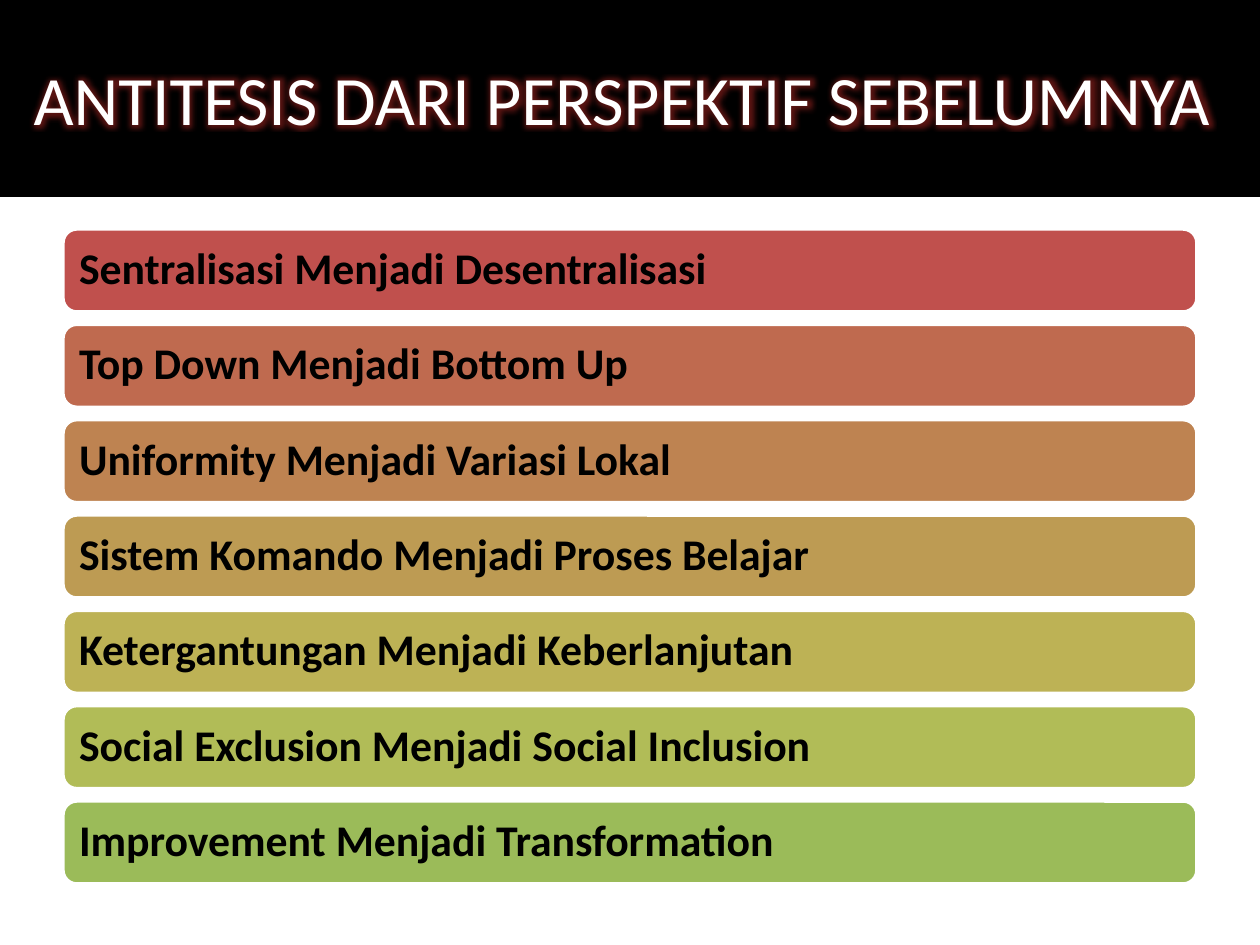
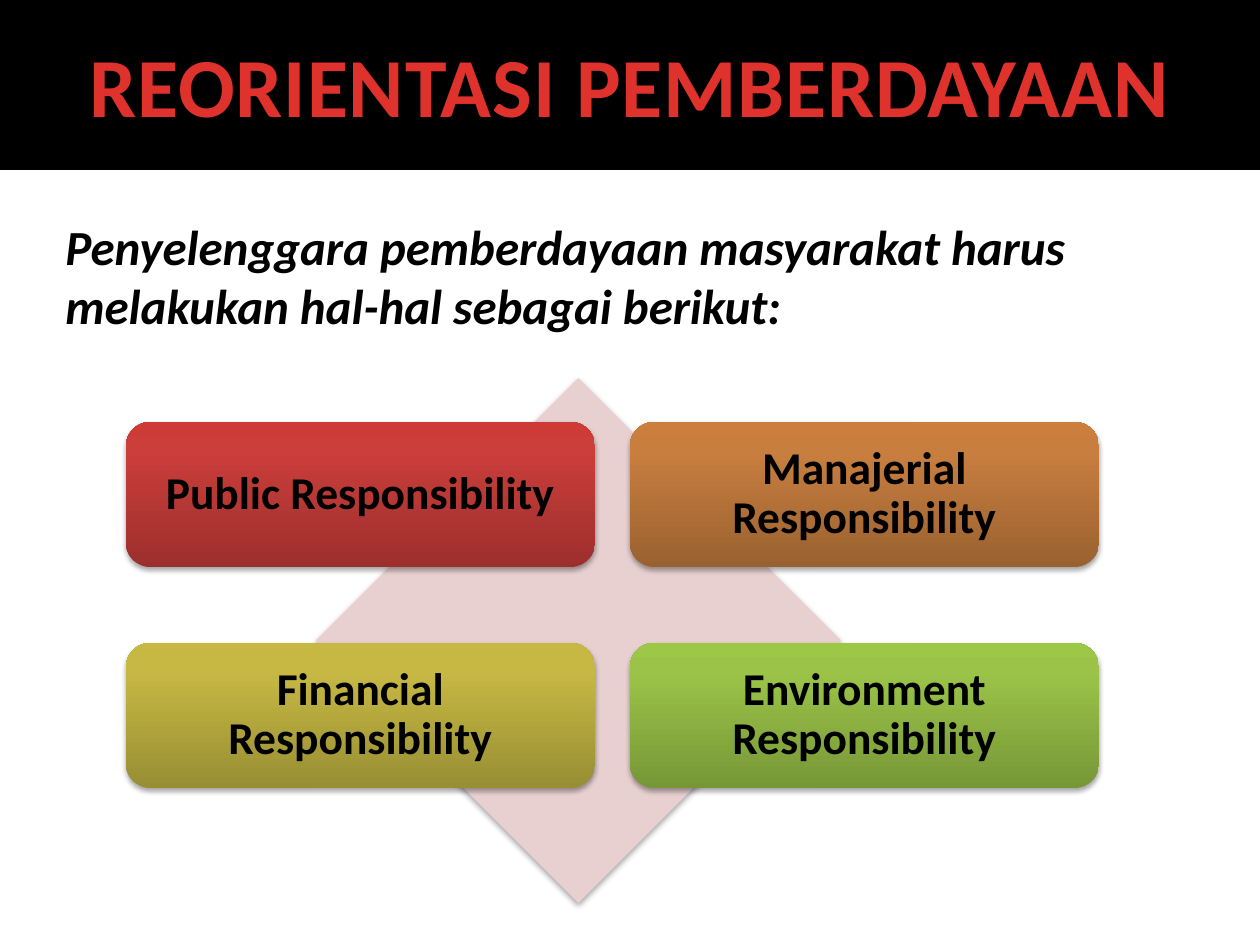
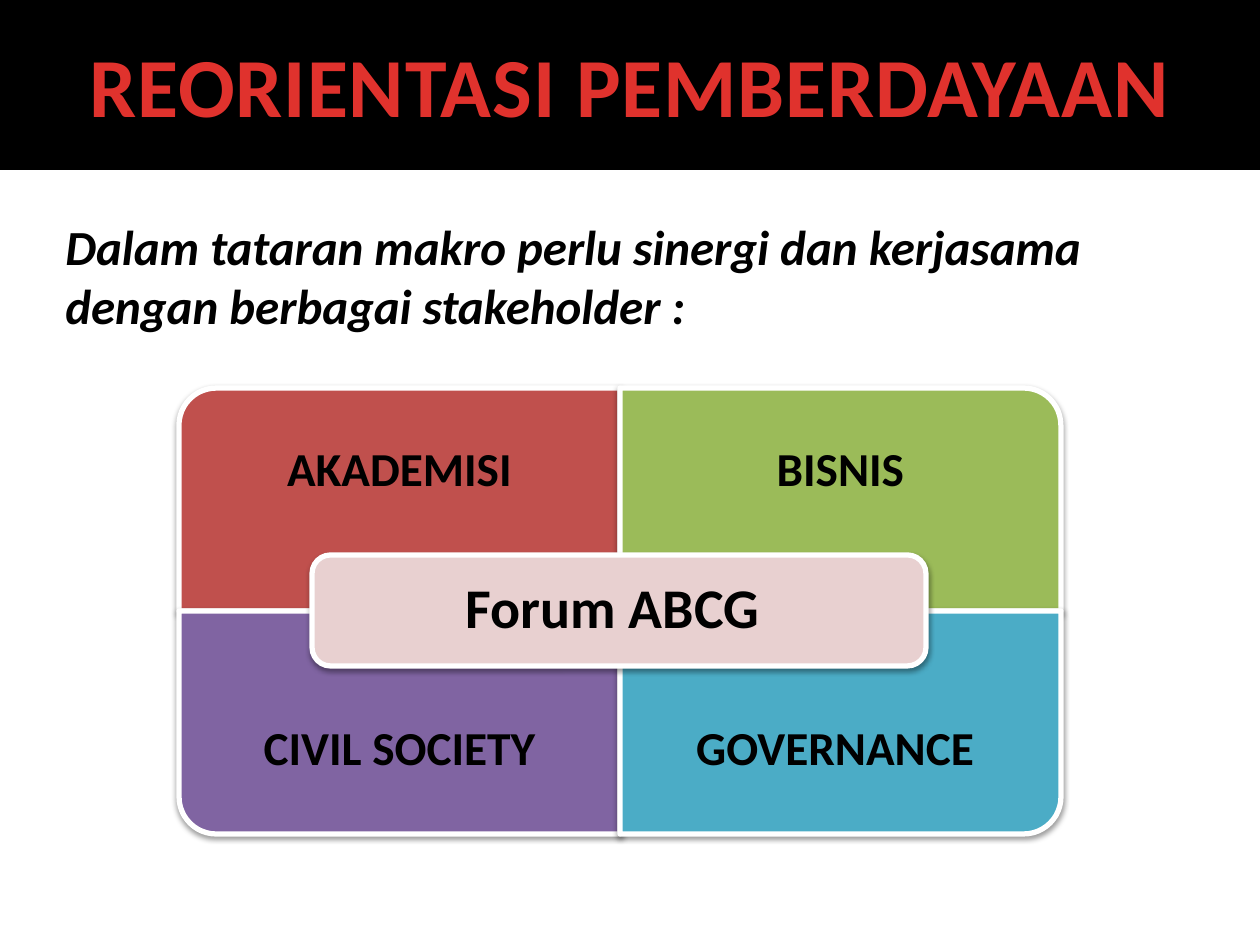
import pptx
import pptx.util
import pptx.dml.color
import pptx.enum.shapes
import pptx.enum.text
import pptx.oxml
import pptx.oxml.ns

# Content
ANTITHESIS_TITLE = "ANTITESIS DARI PERSPEKTIF SEBELUMNYA "
SHIFTS = [
    ("Sentralisasi Menjadi Desentralisasi", "red"),
    ("Top Down Menjadi Bottom Up", "rust"),
    ("Uniformity Menjadi Variasi Lokal", "copper"),
    ("Sistem Komando Menjadi Proses Belajar", "ochre"),
    ("Ketergantungan Menjadi Keberlanjutan", "mustard"),
    ("Social Exclusion Menjadi Social Inclusion", "lime"),
    ("Improvement Menjadi Transformation", "green"),
]
REORIENTATION_TITLE = "REORIENTASI PEMBERDAYAAN"
DUTIES_INTRO = "Penyelenggara pemberdayaan masyarakat harus melakukan hal-hal sebagai berikut:"
DUTIES = [  # text, gradient colours from the bottom up
    ("Public Responsibility", ("9C2F2D", "CB3E3A", "CE3B37")),
    ("Manajerial Responsibility", ("9A6130", "C87E3F", "CC7E3C")),
    ("Financial Responsibility", ("988E34", "C6B843", "C9BB41")),
    ("Environment Responsibility", ("779737", "9BC348", "9DC746")),
]
PARTNERS_INTRO = "Dalam tataran makro perlu sinergi dan kerjasama dengan berbagai stakeholder :"
PARTNERS = [  # text, colour, turn that points the round corner outwards
    ("AKADEMISI", "red", 270),
    ("BISNIS", "green", 0),
    ("CIVIL SOCIETY", "purple", 180),
    ("GOVERNANCE ", "blue", 90),
]
FORUM = "Forum ABCG "

# Shared style
COLORS = {
    "black": "000000", "white": "FFFFFF", "glow": "E0322D", "title_dark": "A2201C",
    "red": "C0504D", "rust": "BF6A4F", "copper": "BE8351", "ochre": "BD9B53",
    "mustard": "BDB255", "lime": "B1BC57", "green": "9BBB59",
    "purple": "8064A2", "blue": "4BACC6", "blush": "E8D0D0",
}
FONT = "Calibri"
TITLE_STOPS = [(25, COLORS["glow"]), (100, COLORS["title_dark"])]
DUTY_SHADOW = (35, 3.1, 1.8)  # opacity %, blur pt, distance pt
PARTNER_SHADOW = (38, 3.1, 1.6)
SLIDE_W, SLIDE_H = 1260, 945
SHAPE = pptx.enum.shapes.MSO_SHAPE
ALIGN = pptx.enum.text.PP_ALIGN
ANCHOR = pptx.enum.text.MSO_ANCHOR
qn = pptx.oxml.ns.qn


def px(length):
    return round(length * 914400 / 126)


def rgb(name):
    return pptx.dml.color.RGBColor.from_string(COLORS[name])


def parse(xml):
    head, tail = xml.split(">", 1)
    return pptx.oxml.parse_xml(f"{head} {pptx.oxml.ns.nsdecls('a')}>{tail}")


def set_gradient(fill, parent, stops, angle):
    """Fill with (percent, hex) stops; angle in degrees clockwise."""
    fill.gradient()
    stop_xml = "".join(
        f'<a:gs pos="{at * 1000}"><a:srgbClr val="{color}"/></a:gs>' for at, color in stops)
    parent.replace(parent.find(qn("a:gradFill")), parse(
        f'<a:gradFill><a:gsLst>{stop_xml}</a:gsLst>'
        f'<a:lin ang="{angle * 60000}" scaled="0"/></a:gradFill>'))


def write(shape, text, size, color="black", bold=True, italic=False, align=ALIGN.LEFT,
          anchor=ANCHOR.MIDDLE, inset=None, line_spacing=None, space_before=None,
          stops=None, tracking=None, glow=False):
    frame = shape.text_frame
    frame.word_wrap = True
    frame.vertical_anchor = anchor
    if inset is not None:
        frame.margin_left = frame.margin_right = px(inset)
        frame.margin_top = frame.margin_bottom = px(inset)
    paragraph = frame.paragraphs[0]
    paragraph.alignment = align
    if line_spacing:
        paragraph.line_spacing = line_spacing
    if space_before:
        paragraph.space_before = pptx.util.Pt(space_before)
    run = paragraph.add_run()
    run.text = text
    font = run.font
    font.name, font.size = FONT, pptx.util.Pt(size)
    font.bold, font.italic = bold, italic
    properties = run._r.get_or_add_rPr()
    if stops:
        set_gradient(font.fill, properties, stops, 90)
    else:
        font.color.rgb = rgb(color)
    if tracking:
        properties.set("spc", str(round(tracking * 100)))
    if glow:
        properties.find(qn("a:solidFill")).addnext(parse(
            f'<a:effectLst><a:glow rad="101600"><a:srgbClr val="{COLORS["glow"]}">'
            '<a:alpha val="40000"/></a:srgbClr></a:glow></a:effectLst>'))


def add_panel(slide, kind, box, fill=None, line=None, line_width=2, stops=None,
              shadow=None, turn=0):
    x, y, w, h = box
    if turn in (90, 270):
        x, y, w, h = x + (w - h) / 2, y + (h - w) / 2, h, w
    panel = slide.shapes.add_shape(kind, px(x), px(y), px(w), px(h))
    panel.rotation = turn
    panel.shadow.inherit = False
    properties = panel._element.spPr
    if stops:
        set_gradient(panel.fill, properties, stops, 270)
    else:
        panel.fill.solid()
        panel.fill.fore_color.rgb = rgb(fill)
    if line:
        panel.line.color.rgb = rgb(line)
        panel.line.width = pptx.util.Pt(line_width)
    else:
        panel.line.fill.background()
    if shadow:
        opacity, blur, distance = shadow
        properties.find(qn("a:effectLst")).append(parse(
            f'<a:outerShdw blurRad="{round(blur * 12700)}" dist="{round(distance * 12700)}" '
            f'dir="5400000" rotWithShape="0"><a:srgbClr val="{COLORS["black"]}">'
            f'<a:alpha val="{opacity * 1000}"/></a:srgbClr></a:outerShdw>'))
    return panel


def add_text(slide, box, text, size, **style):
    text_box = slide.shapes.add_textbox(*map(px, box))
    write(text_box, text, size, **style)
    return text_box


def add_label(slide, box, text, size, inset, align=ALIGN.CENTER):
    add_text(slide, box, text, size, inset=inset, align=align, line_spacing=0.9)


def shrink(box, edge):
    x, y, w, h = box
    return x + edge, y + edge, w - 2 * edge, h - 2 * edge


def add_title(slide, text, height, size, **style):
    band = add_panel(slide, SHAPE.RECTANGLE, (0, 0, SLIDE_W, height), "black", line="black")
    write(band, text, size, align=ALIGN.CENTER, **style)


def add_reorientation_slide(deck, intro):
    slide = deck.slides.add_slide(deck.slide_layouts[6])
    add_title(slide, REORIENTATION_TITLE, 168, 48, stops=TITLE_STOPS, tracking=0.5)
    intro_box = add_text(slide, (53, 210, 1144, 131), intro, 28, italic=True,
                         anchor=ANCHOR.TOP, space_before=12)
    intro_box.text_frame.auto_size = pptx.enum.text.MSO_AUTO_SIZE.SHAPE_TO_FIT_TEXT
    return slide


def add_shifts_slide(deck):
    slide = deck.slides.add_slide(deck.slide_layouts[6])
    add_title(slide, ANTITHESIS_TITLE, 195, 39.6, color="white", bold=False, glow=True)
    first_top, last_top = 229, 801
    pitch = (last_top - first_top) / (len(SHIFTS) - 1)
    for row, (text, color) in enumerate(SHIFTS):
        bar = (63, first_top + row * pitch, 1134, 83)
        add_panel(slide, SHAPE.ROUNDED_RECTANGLE, bar, color, line="white")
        add_label(slide, shrink(bar, 4), text, 25, 12, align=ALIGN.LEFT)


def add_duties_slide(deck):
    slide = add_reorientation_slide(deck, DUTIES_INTRO)
    add_panel(slide, SHAPE.DIAMOND, (316, 378, 525, 525), "blush", shadow=DUTY_SHADOW)
    for index, (text, shades) in enumerate(DUTIES):
        row, column = divmod(index, 2)
        card = (126 + column * 504, 422 + row * 221, 469, 145)
        add_panel(slide, SHAPE.ROUNDED_RECTANGLE, card,
                  stops=list(zip((0, 80, 100), shades)), shadow=DUTY_SHADOW)
        add_label(slide, shrink(card, 7), text, 26, 14)


def add_partners_slide(deck):
    slide = add_reorientation_slide(deck, PARTNERS_INTRO)
    left, top, width, height, label_height = 179, 388, 441, 223, 167
    for index, (text, color, turn) in enumerate(PARTNERS):
        row, column = divmod(index, 2)
        x, y = left + column * width, top + row * height
        add_panel(slide, SHAPE.ROUND_1_RECTANGLE, (x, y, width, height), color,
                  line="white", line_width=3, shadow=PARTNER_SHADOW, turn=turn)
        label_top = y + row * (height - label_height)
        add_label(slide, (x, label_top, width, label_height), text, 27, 26)
    forum = (312, 555, 614, 111)
    add_panel(slide, SHAPE.ROUNDED_RECTANGLE, forum, "blush", line="white", line_width=3,
              shadow=PARTNER_SHADOW)
    add_label(slide, shrink(forum, 6), FORUM, 32, 16)


def main():
    deck = pptx.Presentation()
    deck.slide_width, deck.slide_height = px(SLIDE_W), px(SLIDE_H)
    add_shifts_slide(deck)
    add_duties_slide(deck)
    add_partners_slide(deck)
    deck.save("out.pptx")


if __name__ == "__main__":
    main()
